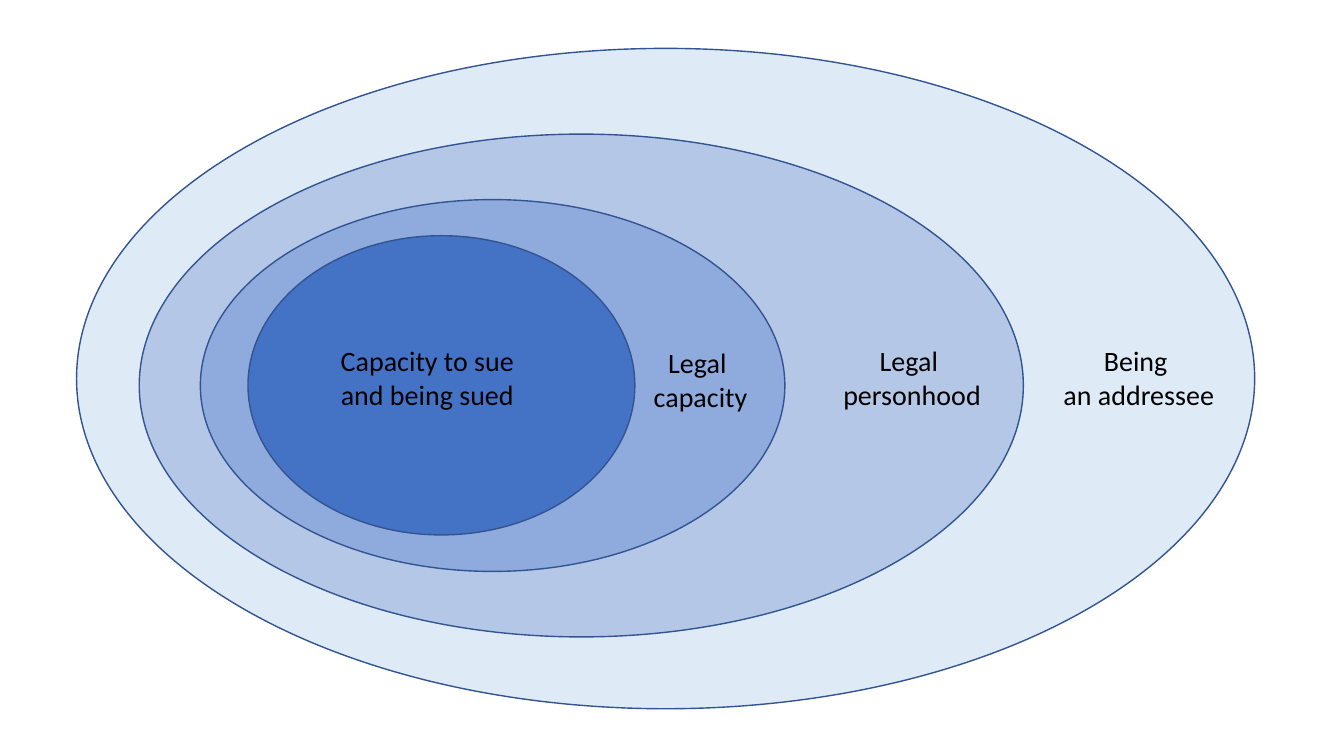
from pptx import Presentation
from pptx.dml.color import RGBColor
from pptx.enum.shapes import MSO_SHAPE
from pptx.enum.text import MSO_AUTO_SIZE, PP_ALIGN
from pptx.util import Cm, Pt

OVAL = MSO_SHAPE.OVAL
CENTER = PP_ALIGN.CENTER
GROW = MSO_AUTO_SIZE.SHAPE_TO_FIT_TEXT

COLORS = {
    "addressee": "DEEBF7",
    "personhood": "B4C7E7",
    "capacity": "8FAADC",
    "sue": "4472C4",
    "outline": "325491",
    "text": "000000",
}

ELLIPSES = [
    ("addressee", 1.93, 1.22, 29.69, 16.64),
    ("personhood", 3.51, 3.38, 22.28, 12.67),
    ("capacity", 5.05, 5.03, 14.73, 9.37),
    ("sue", 6.25, 5.94, 9.75, 7.54),
]

LABELS = [
    (["Being ", "an addressee"], 26.39, 8.53, 4.62),
    (["Legal ", "personhood"], 20.98, 8.53, 4.01),
    (["Legal ", "capacity"], 15.65, 8.59, 4.01),
    (["Capacity to sue and being sued"], 7.95, 8.53, 5.64),
]
LABEL_HEIGHT = 1.96


def color(name):
    return RGBColor.from_string(COLORS[name])


def add_ellipse(page, fill, left, top, width, height):
    ellipse = page.shapes.add_shape(OVAL, Cm(left), Cm(top), Cm(width), Cm(height))
    ellipse.shadow.inherit = False
    ellipse.fill.solid()
    ellipse.fill.fore_color.rgb = color(fill)
    ellipse.line.color.rgb = color("outline")
    ellipse.line.width = Pt(1)


def add_label(page, lines, left, top, width):
    box = page.shapes.add_textbox(Cm(left), Cm(top), Cm(width), Cm(LABEL_HEIGHT))
    frame = box.text_frame
    frame.word_wrap = True
    frame.auto_size = GROW
    frame.text = "\n".join(lines)
    for para in frame.paragraphs:
        para.alignment = CENTER
        para.font.name = "Calibri"
        para.font.size = Pt(20)
        para.font.color.rgb = color("text")


def main():
    deck = Presentation()
    deck.slide_width = Cm(33.87)
    deck.slide_height = Cm(19.05)
    page = deck.slides.add_slide(deck.slide_layouts[6])
    for ellipse in ELLIPSES:
        add_ellipse(page, *ellipse)
    for label in LABELS:
        add_label(page, *label)
    deck.save("out.pptx")


if __name__ == "__main__":
    main()
